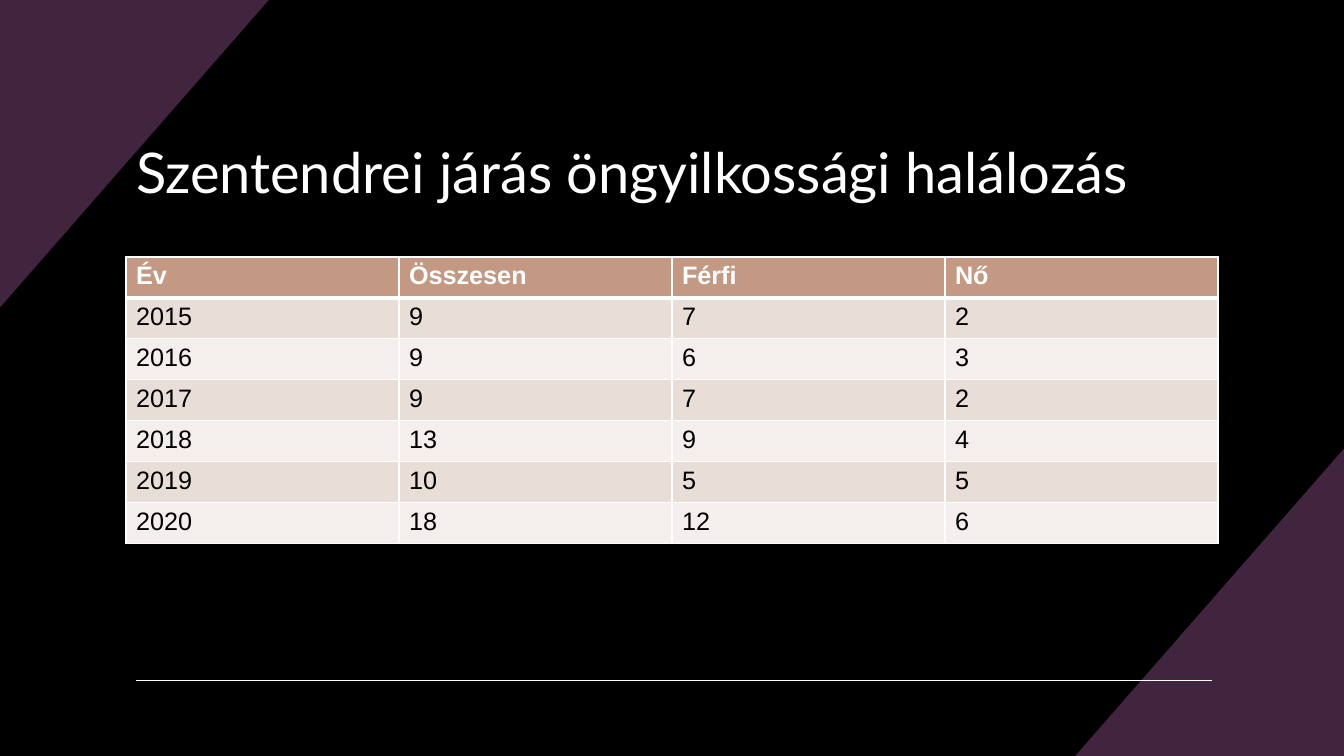
from dataclasses import dataclass

import pptx
import pptx.dml.color
import pptx.enum.shapes
import pptx.enum.text
import pptx.oxml.ns
import pptx.util
from lxml import etree

Pt = pptx.util.Pt
RGBColor = pptx.dml.color.RGBColor

BLACK = RGBColor(0x00, 0x00, 0x00)
WHITE = RGBColor(0xFF, 0xFF, 0xFF)
PLUM = RGBColor(0x41, 0x24, 0x3E)
HEADER = RGBColor(0xC3, 0x99, 0x83)
BAND_DARK = RGBColor(0xE9, 0xDD, 0xD8)
BAND_LIGHT = RGBColor(0xF4, 0xEF, 0xEC)

WIDTH, HEIGHT = 960, 540
CORNER_W, CORNER_H = 192, 219.6
LEFT, CONTENT_W = 90, 780
ROW_H = 29.2

ROWS = [
    ("Év", "Összesen", "Férfi", "Nő"),
    ("2015", "9", "7", "2"),
    ("2016", "9", "6", "3"),
    ("2017", "9", "7", "2"),
    ("2018", "13", "9", "4"),
    ("2019", "10", "5", "5"),
    ("2020", "18", "12", "6"),
]


@dataclass
class Corner:
    """A triangle at a slide corner, reaching dx and dy along the edges."""
    x: float
    y: float
    dx: float
    dy: float


CORNERS = [
    Corner(WIDTH, HEIGHT, -CORNER_W, -CORNER_H),
    Corner(0, 0, CORNER_W, CORNER_H),
]


@dataclass
class RowStyle:
    fill: RGBColor
    color: RGBColor
    bold: bool
    top: float
    bottom: float


def row_style(row: int) -> RowStyle:
    if row == 0:
        return RowStyle(HEADER, WHITE, True, 1, 3)
    fill = BAND_DARK if row % 2 else BAND_LIGHT
    return RowStyle(fill, BLACK, False, 3 if row == 1 else 1, 1)


def add_corner(s: pptx.slide.Slide, corner: Corner) -> None:
    builder = s.shapes.build_freeform(Pt(corner.x), Pt(corner.y + corner.dy))
    builder.add_line_segments([
        (Pt(corner.x), Pt(corner.y)),
        (Pt(corner.x + corner.dx), Pt(corner.y)),
    ])
    sp = builder.convert_to_shape()
    sp.shadow.inherit = False
    sp.fill.solid()
    sp.fill.fore_color.rgb = PLUM
    sp.line.fill.background()


def add_rule(s: pptx.slide.Slide) -> None:
    line = s.shapes.add_connector(
        pptx.enum.shapes.MSO_CONNECTOR.STRAIGHT,
        Pt(97.2), Pt(486), Pt(865.4), Pt(486))
    line.line.color.rgb = WHITE
    line.line.width = Pt(1)
    etree.SubElement(line.element.spPr, pptx.oxml.ns.qn("a:effectLst"))


def set_title(s: pptx.slide.Slide, text: str) -> None:
    """Fill the title placeholder and bring it in front of the corners."""
    title = s.shapes.title
    title.left, title.top = Pt(LEFT), Pt(68.4)
    title.width, title.height = Pt(CONTENT_W), Pt(107.2)
    tf = title.text_frame
    tf.text = text
    tf.word_wrap = True
    tf.auto_size = pptx.enum.text.MSO_AUTO_SIZE.NONE
    tf.vertical_anchor = pptx.enum.text.MSO_ANCHOR.MIDDLE
    p = tf.paragraphs[0]
    p.alignment = pptx.enum.text.PP_ALIGN.LEFT
    font = p.runs[0].font
    font.name, font.size = "Lato", Pt(40)
    font.color.rgb = WHITE
    title.element.getparent().append(title.element)


def add_border(cell: pptx.table._Cell, side: str, width: float) -> None:
    qn = pptx.oxml.ns.qn
    tc_pr = cell.fill and cell._tc.get_or_add_tcPr()
    ln = etree.SubElement(tc_pr, qn(f"a:ln{side}"), w=str(Pt(width)))
    fill = etree.SubElement(ln, qn("a:solidFill"))
    etree.SubElement(fill, qn("a:srgbClr"), val=str(WHITE))


def format_cell(cell: pptx.table._Cell, text: str, style: RowStyle) -> None:
    cell.text_frame.text = text
    font = cell.text_frame.paragraphs[0].runs[0].font
    font.name, font.size, font.bold = "Arial", Pt(18), style.bold
    font.color.rgb = style.color
    borders = {"L": 1, "R": 1, "T": style.top, "B": style.bottom}
    for side, width in borders.items():
        add_border(cell, side, width)
    cell.fill.solid()
    cell.fill.fore_color.rgb = style.fill


def add_deaths_table(s: pptx.slide.Slide) -> None:
    table = s.shapes.add_table(
        len(ROWS), len(ROWS[0]), Pt(LEFT), Pt(183.6),
        Pt(CONTENT_W), Pt(ROW_H * len(ROWS))).table
    for i, values in enumerate(ROWS):
        for j, text in enumerate(values):
            format_cell(table.cell(i, j), text, row_style(i))


def main() -> None:
    prs = pptx.Presentation()
    prs.slide_width, prs.slide_height = Pt(WIDTH), Pt(HEIGHT)
    s = prs.slides.add_slide(prs.slide_layouts[5])
    s.background.fill.solid()
    s.background.fill.fore_color.rgb = BLACK
    for corner in CORNERS:
        add_corner(s, corner)
    add_rule(s)
    set_title(s, "Szentendrei járás öngyilkossági halálozás")
    add_deaths_table(s)
    prs.save("out.pptx")


if __name__ == "__main__":
    main()
